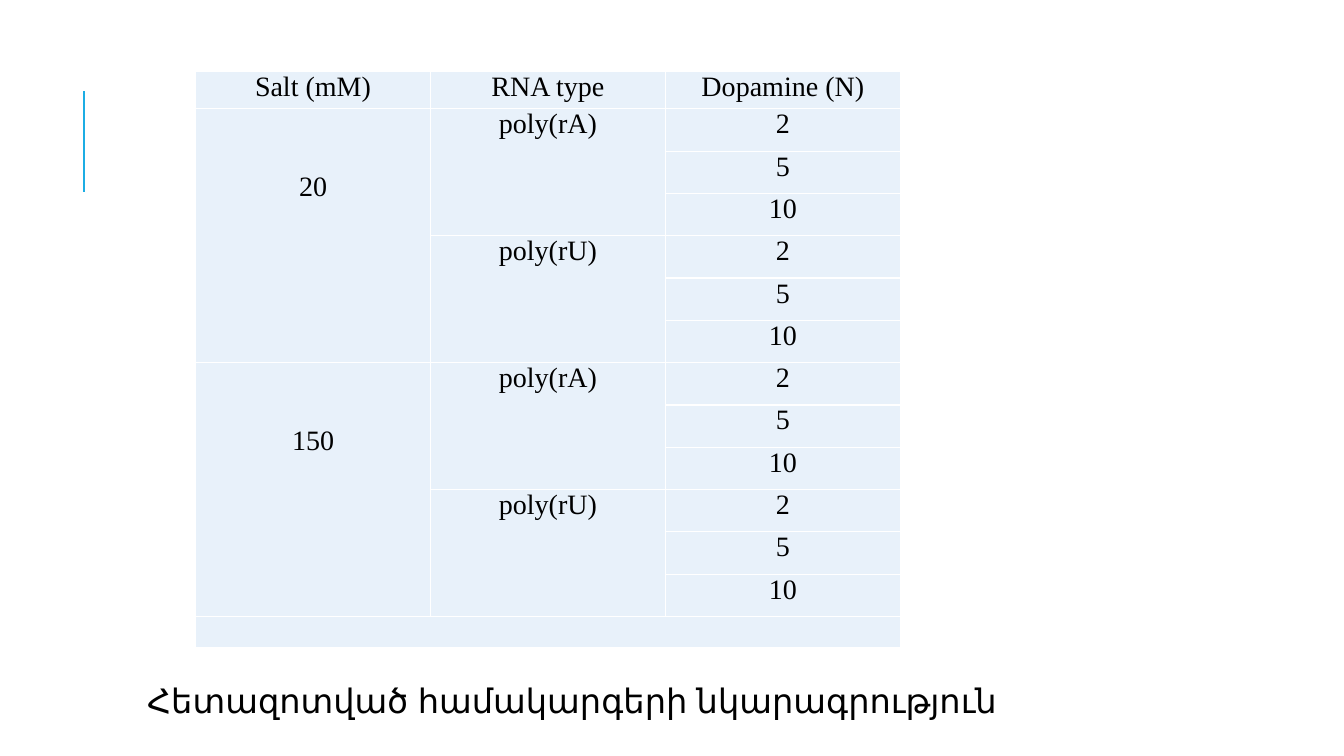
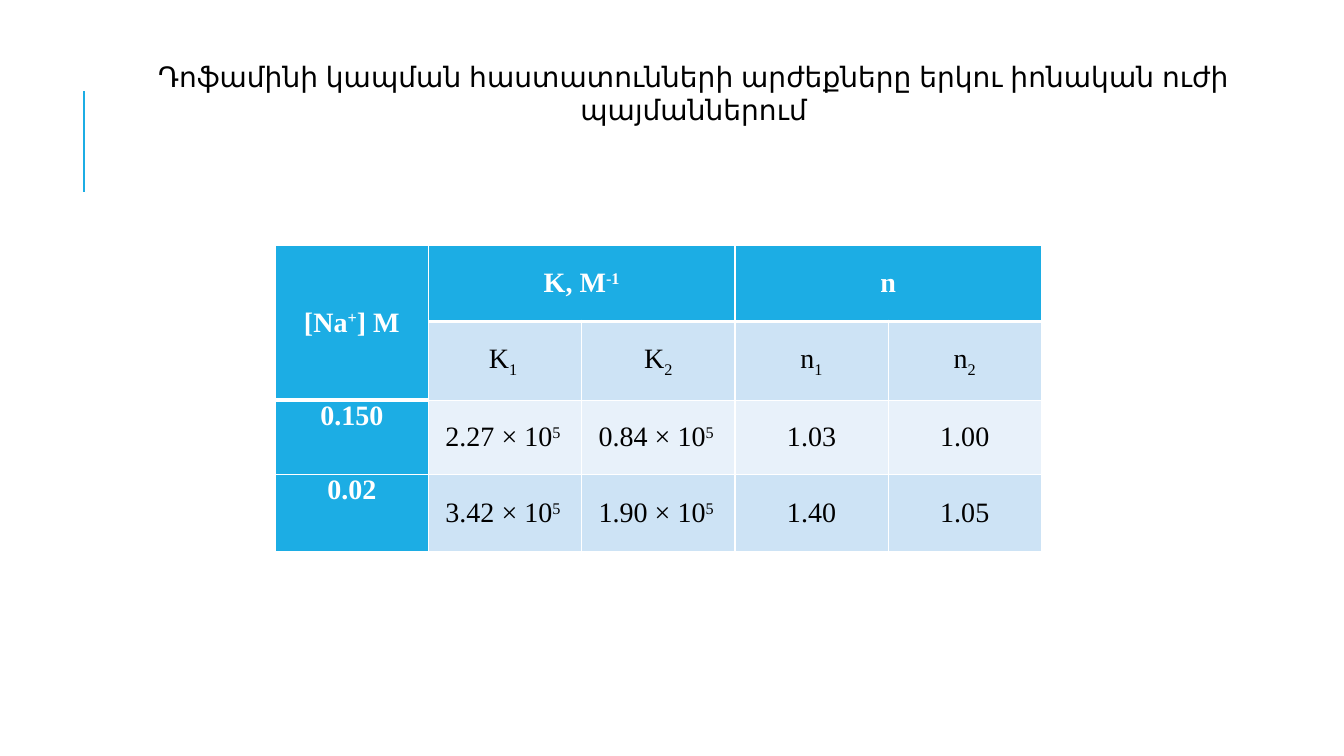
from lxml import etree
from pptx import Presentation
from pptx import util as u
from pptx.dml.color import RGBColor
from pptx.enum import shapes, text
from pptx.oxml.ns import qn

ACCENT, PALE, MID = "1CADE4", "E8F1FA", "CDE3F5"
BLACK, WHITE = "000000", "FFFFFF"
BASELINES = {"^": "30000", "_": "-25000"}
CENTER, JUSTIFY = text.PP_ALIGN.CENTER, text.PP_ALIGN.JUSTIFY
TOP, MIDDLE = text.MSO_ANCHOR.TOP, text.MSO_ANCHOR.MIDDLE


def rgb(value):
    return RGBColor.from_string(value)


class Deck:
    body_font = "Times New Roman"
    title_font = "Arial"
    table_size = 20

    def __init__(self):
        self.prs = Presentation()
        self.prs.slide_width = u.Inches(13.33)
        self.prs.slide_height = u.Inches(7.5)
        self.slide = None

    def add_slide(self):
        self.slide = self.prs.slides.add_slide(self.prs.slide_layouts[5])
        accent = self.slide.shapes.add_connector(
            shapes.MSO_CONNECTOR.STRAIGHT,
            u.Inches(0.83), u.Inches(1.9), u.Inches(0.83), u.Inches(0.9))
        accent.line.color.rgb = rgb(ACCENT)
        accent.line.width = u.Pt(1.5)
        etree.SubElement(accent._element.spPr, qn("a:effectLst"))

    def style(self, paragraph, font, size, color, align=CENTER, bold=False):
        paragraph.alignment = align
        paragraph.font.name = font
        paragraph.font.size = u.Pt(size)
        paragraph.font.bold = bold
        paragraph.font.color.rgb = rgb(color)

    def title(self, wording, box, size, align=CENTER, anchor=MIDDLE):
        heading = self.slide.shapes.title
        heading.left, heading.top, heading.width, heading.height = map(u.Inches, box)
        frame = heading.text_frame
        frame.text = wording
        frame.word_wrap = True
        frame.auto_size = text.MSO_AUTO_SIZE.NONE
        frame.vertical_anchor = anchor
        self.style(frame.paragraphs[0], self.title_font, size, BLACK, align)

    def table(self, left, top, col_width, columns, row_heights):
        frame = self.slide.shapes.add_table(
            len(row_heights), columns, u.Inches(left), u.Inches(top),
            u.Inches(col_width * columns), u.Inches(sum(row_heights)))
        grid = frame.table
        grid.first_row = grid.horz_banding = False
        for column in grid.columns:
            column.width = u.Inches(col_width)
        for row, height in zip(grid.rows, row_heights):
            row.height = u.Inches(height)
        return grid

    def cell(self, cell, wording, fill, side, color=BLACK, bold=False,
             anchor=TOP, inset_top=0, thick=()):
        cell.margin_left = cell.margin_right = u.Inches(side)
        cell.margin_top, cell.margin_bottom = u.Inches(inset_top), 0
        cell.vertical_anchor = anchor
        self.borders(cell, thick)
        cell.fill.solid()
        cell.fill.fore_color.rgb = rgb(fill)
        if not wording:
            return
        paragraph = cell.text_frame.paragraphs[0]
        for part in wording.split("|"):
            run = paragraph.add_run()
            if part[0] in BASELINES:
                run._r.get_or_add_rPr().set("baseline", BASELINES[part[0]])
                part = part[1:]
            run.text = part
        self.style(paragraph, self.body_font, self.table_size, color, bold=bold)

    def borders(self, cell, thick):
        properties = cell._tc.get_or_add_tcPr()
        for edge in "LRTB":
            width = u.Pt(3 if edge in thick else 1)
            line = etree.SubElement(properties, qn("a:ln" + edge), w=str(int(width)))
            solid = etree.SubElement(line, qn("a:solidFill"))
            etree.SubElement(solid, qn("a:srgbClr"), val=WHITE)


def systems_slide(deck):
    deck.add_slide()
    deck.title("Հետազոտված համակարգերի նկարագրություն",
               (1.36, 6.69, 11.14, 0.5), 24, JUSTIFY, TOP)
    doses = ["2", "5", "10"]
    rows = [["Salt (mM)", "RNA type", "Dopamine (N)"]]
    for salt in ("20", "150"):
        for rna in ("poly(rA)", "poly(rU)"):
            for dose in doses:
                first = dose == doses[0]
                rows.append([salt if first and rna == "poly(rA)" else "",
                             rna if first else "", dose])
    rows.append([""] * 3)
    systems = deck.table(1.94, 0.71, 2.33, 3, [0.37] + [0.42] * 12 + [0.28])
    for r, row in enumerate(rows):
        for c, wording in enumerate(row):
            salt_cell = c == 0 and r > 0 and wording
            deck.cell(systems.cell(r, c), wording, PALE, 0.06,
                      inset_top=0.62 if salt_cell else 0)
    for top in (1, 7):
        systems.cell(top, 0).merge(systems.cell(top + 5, 0))
    for top in range(1, 13, 3):
        systems.cell(top, 1).merge(systems.cell(top + 2, 1))
    systems.cell(13, 0).merge(systems.cell(13, 2))


def constants_slide(deck):
    deck.add_slide()
    deck.title("Դոֆամինի կապման հաստատունների արժեքները երկու իոնական ուժի պայմաններում",
               (1.12, 0.7, 11.52, 0.44), 20)
    rows = [
        ["[Na|^+|] M", "K, M|^-1", "", "n", ""],
        ["", "K|_1 ", "K|_2", "n|_1", "n|_2"],
        ["0.150", "2.27 × 10|^5 ", "0.84 × 10|^5 ", "1.03", "1.00"],
        ["0.02", "3.42 × 10|^5 ", "1.90 × 10|^5 ", "1.40", "1.05"],
    ]
    constants = deck.table(2.73, 2.43, 1.52, 5, [0.76, 0.78, 0.74, 0.76])
    for r, row in enumerate(rows):
        for c, wording in enumerate(row):
            header = r == 0 or c == 0
            last_header_row = 1 if c == 0 else 0
            thick = "B" if r <= last_header_row else "T" if r == last_header_row + 1 else ""
            deck.cell(constants.cell(r, c), wording,
                      ACCENT if header else PALE if r == 2 else MID, 0.07,
                      WHITE if header else BLACK, header,
                      TOP if c == 0 and r > 1 else MIDDLE, thick=thick)
    constants.cell(0, 0).merge(constants.cell(1, 0))
    for c in (1, 3):
        constants.cell(0, c).merge(constants.cell(0, c + 1))


def main():
    deck = Deck()
    systems_slide(deck)
    constants_slide(deck)
    deck.prs.save("out.pptx")


if __name__ == "__main__":
    main()
